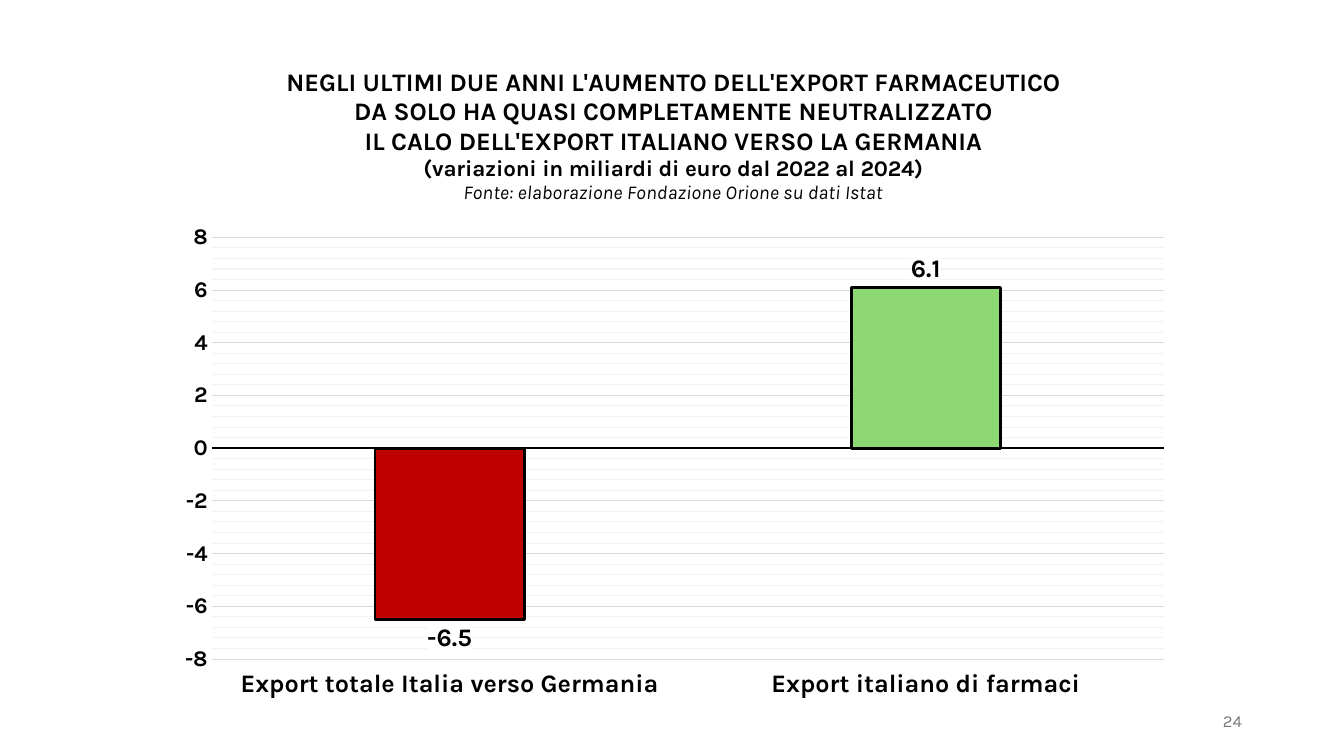
import pptx
import pptx.chart.data
import pptx.dml.color
import pptx.enum.chart
import pptx.enum.text
import pptx.oxml
import pptx.oxml.ns
import pptx.util
from pptx.util import Cm, Pt

FONT = "Karla"
BLACK = "000000"
TITLE_LINES = [
    ("NEGLI ULTIMI DUE ANNI L'AUMENTO DELL'EXPORT FARMACEUTICO", {"size": 18}),
    ("DA SOLO HA QUASI COMPLETAMENTE NEUTRALIZZATO", {"size": 18}),
    ("IL CALO DELL'EXPORT ITALIANO VERSO LA GERMANIA", {"size": 18}),
    ("(variazioni in miliardi di euro dal 2022 al 2024)", {"size": 16}),
    ("Fonte: elaborazione Fondazione Orione su dati Istat",
     {"size": 14, "bold": False, "italic": True}),
]
EXPORTS = [
    ("Export totale Italia verso Germania", -6.5, "C00000"),
    ("Export italiano di farmaci", 6.1, "8ED973"),
]


def colour(value):
    return pptx.dml.color.RGBColor.from_string(value)


def set_values(target, values):
    for name, value in values.items():
        setattr(target, name, value)


def style_font(font, size, hex_colour=BLACK, bold=True, italic=False):
    set_values(font, {"name": FONT, "size": Pt(size), "bold": bold, "italic": italic})
    font.color.rgb = colour(hex_colour)


def style_line(line, hex_colour, width):
    line.color.rgb = colour(hex_colour)
    line.width = Pt(width)


def chart_xml(tag, content):
    """Make a chart element that holds the given XML."""
    spaces = pptx.oxml.ns.nsdecls("c", "a")
    return pptx.oxml.parse_xml(f"<c:{tag} {spaces}>{content}</c:{tag}>")


def solid_fill(hex_colour):
    return f'<a:solidFill><a:srgbClr val="{hex_colour}"/></a:solidFill>'


def place(parent, index, fractions, target=""):
    """Set a manual layout, in fractions of the chart's size."""
    previous = parent.find(pptx.oxml.ns.qn("c:layout"))
    if previous is not None:
        parent.remove(previous)
    modes = "".join(f'<c:{axis}Mode val="edge"/>' for axis in "xy")
    sizes = "".join(f'<c:{name} val="{value}"/>' for name, value in fractions.items())
    parent.insert(index, chart_xml(
        "layout", f"<c:manualLayout>{target}{modes}{sizes}</c:manualLayout>"))


def write_title(chart):
    title = chart.chart_title
    frame = title.text_frame
    for number, (text, style) in enumerate(TITLE_LINES):
        para = frame.add_paragraph() if number else frame.paragraphs[0]
        para.alignment = pptx.enum.text.PP_ALIGN.CENTER
        span = para.add_run()
        span.text = text
        style_font(span.font, **style)
    title.include_in_layout = False
    place(title._element, 1, {"x": 0.12, "y": 0.03})


def format_axes(chart):
    no_tick = pptx.enum.chart.XL_TICK_MARK.NONE
    ticks = {"major_tick_mark": no_tick, "minor_tick_mark": no_tick}
    categories, values = chart.category_axis, chart.value_axis
    set_values(categories, ticks)
    categories.tick_label_position = pptx.enum.chart.XL_TICK_LABEL_POSITION.LOW
    style_font(categories.tick_labels.font, 18)
    style_line(categories.format.line, BLACK, 1.5)

    set_values(values, ticks | {
        "minimum_scale": -8, "maximum_scale": 8, "major_unit": 2, "minor_unit": 0.4,
        "has_major_gridlines": True, "has_minor_gridlines": True})
    style_font(values.tick_labels.font, 16)
    values.format.line.fill.background()
    style_line(values.major_gridlines.format.line, "D9D9D9", 0.75)
    minor_grid = values._element.find(pptx.oxml.ns.qn("c:minorGridlines"))
    minor_grid.append(chart_xml(
        "spPr", f'<a:ln w="{Pt(0.75)}">{solid_fill("F2F2F2")}</a:ln>'))


def format_bars(plot):
    set_values(plot, {"gap_width": 219, "overlap": -27, "vary_by_categories": False})
    series = plot.series[0]
    series.invert_if_negative = False
    for number, (_, _, fill) in enumerate(EXPORTS):
        bar = series.points[number].format
        bar.fill.solid()
        bar.fill.fore_color.rgb = colour(fill)
        style_line(bar.line, BLACK, 2)

    labels = series.data_labels
    set_values(labels, {
        "show_value": True, "number_format": "0.0", "number_format_is_linked": False,
        "position": pptx.enum.chart.XL_LABEL_POSITION.OUTSIDE_END})
    style_font(labels.font, 18)
    text_style = labels._element.find(pptx.oxml.ns.qn("c:txPr"))
    text_style.addprevious(chart_xml("spPr", solid_fill("FFFFFF")))


def add_export_chart(page):
    data = pptx.chart.data.CategoryChartData()
    data.categories = [name for name, _, _ in EXPORTS]
    data.add_series("Variazione 2022-2024", [value for _, value, _ in EXPORTS])
    chart = page.shapes.add_chart(
        pptx.enum.chart.XL_CHART_TYPE.COLUMN_CLUSTERED,
        Cm(4.04), Cm(1.09), Cm(25.81), Cm(16.87), data).chart
    chart.has_legend = False
    style_font(chart.font, 10, bold=False)
    write_title(chart)
    format_axes(chart)
    format_bars(chart.plots[0])
    place(chart._chartSpace.chart.plotArea, 0,
          {"x": 0.05, "y": 0.29, "w": 0.93, "h": 0.63},
          '<c:layoutTarget val="inner"/>')


def add_page_number(page, number):
    box = page.shapes.add_textbox(Cm(23.93), Cm(17.65), Cm(7.62), Cm(1.02))
    frame = box.text_frame
    set_values(frame, {"word_wrap": True,
                       "vertical_anchor": pptx.enum.text.MSO_ANCHOR.MIDDLE})
    para = frame.paragraphs[0]
    para.alignment = pptx.enum.text.PP_ALIGN.RIGHT
    span = para.add_run()
    span.text = str(number)
    style_font(span.font, 12, "797979", bold=False)


def main():
    deck = pptx.Presentation()
    set_values(deck, {"slide_width": Cm(33.87), "slide_height": Cm(19.05)})
    page = deck.slides.add_slide(deck.slide_layouts.get_by_name("Blank"))
    add_export_chart(page)
    add_page_number(page, 24)
    deck.save("out.pptx")


if __name__ == "__main__":
    main()
